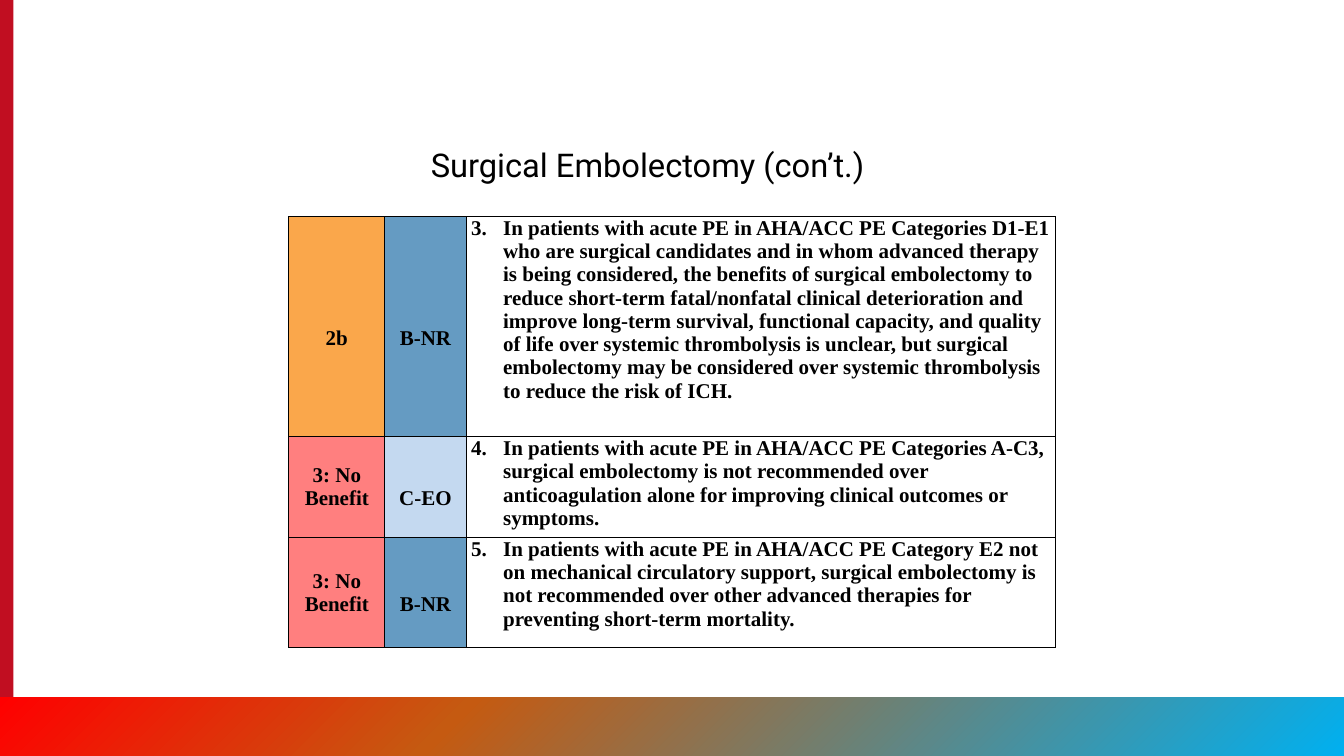
from dataclasses import dataclass

from lxml.etree import SubElement
from pptx import Presentation
from pptx.dml.color import RGBColor
from pptx.enum.shapes import MSO_SHAPE as Preset
from pptx.enum.text import MSO_ANCHOR as Anchor, MSO_AUTO_SIZE as AutoSize, PP_ALIGN as Align
from pptx.oxml.ns import qn
from pptx.util import Inches, Pt

BLACK = RGBColor(0x00, 0x00, 0x00)
RED_STRIPE = RGBColor(0xC1, 0x0E, 0x21)
ORANGE = RGBColor(0xFA, 0xA7, 0x4B)
SALMON = RGBColor(0xFF, 0x7F, 0x7F)
BLUE = RGBColor(0x65, 0x9B, 0xC2)
PALE_BLUE = RGBColor(0xC4, 0xD9, 0xF0)
FOOTER_STOPS = (
    (0, RGBColor(0xFF, 0x00, 0x00)),
    (34, RGBColor(0xC5, 0x5A, 0x11)),
    (100, RGBColor(0x00, 0xB0, 0xF0)),
)

SLIDE_WIDTH, SLIDE_HEIGHT = Inches(16), Inches(9)
GRID_COLUMNS, GRID_ROWS = 160, 90
COLUMN_SPANS = (11.4, 9.7, 70.2)
TITLE_FONT, TABLE_FONT = "Roboto", "Times New Roman"


@dataclass(frozen=True)
class Recommendation:
    strength: str
    strength_color: RGBColor
    strength_spacing: float
    evidence: str
    evidence_color: RGBColor
    number: int
    advice: str
    row_span: float


RECOMMENDATIONS = (
    Recommendation(
        "2b", ORANGE, 2, "B-NR", BLUE, 3,
        "In patients with acute PE in AHA/ACC PE Categories D1-E1 who are surgical "
        "candidates and in whom advanced therapy is being considered, the benefits of "
        "surgical embolectomy to reduce short-term fatal/nonfatal clinical deterioration "
        "and improve long-term survival, functional capacity, and quality of life over "
        "systemic thrombolysis is unclear, but surgical embolectomy may be considered "
        "over systemic thrombolysis to reduce the risk of ICH.",
        26.2,
    ),
    Recommendation(
        "3: No Benefit", SALMON, 1, "C-EO", PALE_BLUE, 4,
        "In patients with acute PE in AHA/ACC PE Categories A-C3, surgical embolectomy is "
        "not recommended over anticoagulation alone for improving clinical outcomes or "
        "symptoms.",
        12,
    ),
    Recommendation(
        "3: No Benefit", SALMON, 1, "B-NR", BLUE, 5,
        "In patients with acute PE in AHA/ACC PE Category E2 not on mechanical circulatory "
        "support, surgical embolectomy is not recommended over other advanced therapies "
        "for preventing short-term mortality.",
        13.1,
    ),
)


def across(columns: float) -> int:
    return round(SLIDE_WIDTH * columns / GRID_COLUMNS)


def down(rows: float) -> int:
    return round(SLIDE_HEIGHT * rows / GRID_ROWS)


def area(left: float, top: float, width: float, height: float) -> tuple:
    return across(left), down(top), across(width), down(height)


def write(frame, text: str, *, font: str, size: float, bold=False, align=Align.LEFT,
          spacing=None, after=None, number=None) -> None:
    para = frame.paragraphs[0]
    if number is not None:
        properties = para._p.get_or_add_pPr()
        properties.set("marL", str(Inches(0.38)))
        properties.set("indent", str(-Inches(0.38)))
        SubElement(properties, qn("a:buAutoNum"), type="arabicPeriod", startAt=str(number))
    para.alignment = align
    if spacing is not None:
        para.line_spacing = spacing
    if after is not None:
        para.space_after = Pt(after)
    span = para.add_run()
    span.text = text
    span.font.name = font
    span.font.size = Pt(size)
    span.font.bold = bold
    span.font.color.rgb = BLACK


def draw_band(page, place: tuple, color: RGBColor):
    band = page.shapes.add_shape(Preset.RECTANGLE, *place)
    band.shadow.inherit = False
    band.fill.solid()
    band.fill.fore_color.rgb = color
    band.line.fill.background()
    return band


def draw_footer(page) -> None:
    footer = draw_band(page, area(0, 83, 160, 7), RED_STRIPE)
    footer.fill.gradient()
    gradient = footer._element.spPr.find(qn("a:gradFill"))
    stops = gradient.find(qn("a:gsLst"))
    for stop in list(stops):
        stops.remove(stop)
    for position, color in FOOTER_STOPS:
        stop = SubElement(stops, qn("a:gs"), pos=str(position * 1000))
        SubElement(stop, qn("a:srgbClr"), val=str(color))
    direction = gradient.find(qn("a:lin"))
    direction.set("ang", str(45 * 60000))
    direction.set("scaled", "0")


def draw_title(page) -> None:
    box = page.shapes.add_textbox(*area(50.3, 16.7, 59.5, 5.7))
    box.text_frame.word_wrap = True
    box.text_frame.auto_size = AutoSize.SHAPE_TO_FIT_TEXT
    write(box.text_frame, "Surgical Embolectomy (con’t.)", font=TITLE_FONT, size=28)


def style_cell(cell, color=None, anchor=Anchor.MIDDLE) -> None:
    properties = cell._tc.get_or_add_tcPr()
    for side in ("lnL", "lnR", "lnT", "lnB"):
        border = SubElement(properties, qn(f"a:{side}"), w=str(Pt(1)))
        paint = SubElement(border, qn("a:solidFill"))
        SubElement(paint, qn("a:srgbClr"), val=str(BLACK))
    if color is None:
        cell.fill.background()
    else:
        cell.fill.solid()
        cell.fill.fore_color.rgb = color
    cell.vertical_anchor = anchor
    cell.margin_left = cell.margin_right = Inches(0.06)
    cell.margin_top = cell.margin_bottom = 0


def draw_recommendations(page) -> None:
    height = sum(item.row_span for item in RECOMMENDATIONS)
    place = area(34.4, 25.8, sum(COLUMN_SPANS), height)
    table = page.shapes.add_table(len(RECOMMENDATIONS), len(COLUMN_SPANS), *place).table
    table.first_row = table.horz_banding = False
    for column, columns in zip(table.columns, COLUMN_SPANS):
        column.width = across(columns)
    text_format = {"font": TABLE_FONT, "size": 18, "bold": True, "after": 8}
    for row, item in zip(table.rows, RECOMMENDATIONS):
        row.height = down(item.row_span)
        strength, evidence, advice = row.cells
        style_cell(strength, item.strength_color)
        write(strength.text_frame, item.strength, align=Align.CENTER,
              spacing=item.strength_spacing, **text_format)
        style_cell(evidence, item.evidence_color)
        write(evidence.text_frame, item.evidence, align=Align.CENTER, spacing=2, **text_format)
        style_cell(advice, anchor=Anchor.TOP)
        write(advice.text_frame, item.advice, number=item.number, **text_format)


def main() -> None:
    deck = Presentation()
    deck.slide_width, deck.slide_height = SLIDE_WIDTH, SLIDE_HEIGHT
    page = deck.slides.add_slide(deck.slide_layouts[6])
    draw_band(page, area(0, 0, 1.6, 90), RED_STRIPE)
    draw_footer(page)
    draw_title(page)
    draw_recommendations(page)
    deck.save("out.pptx")


if __name__ == "__main__":
    main()
